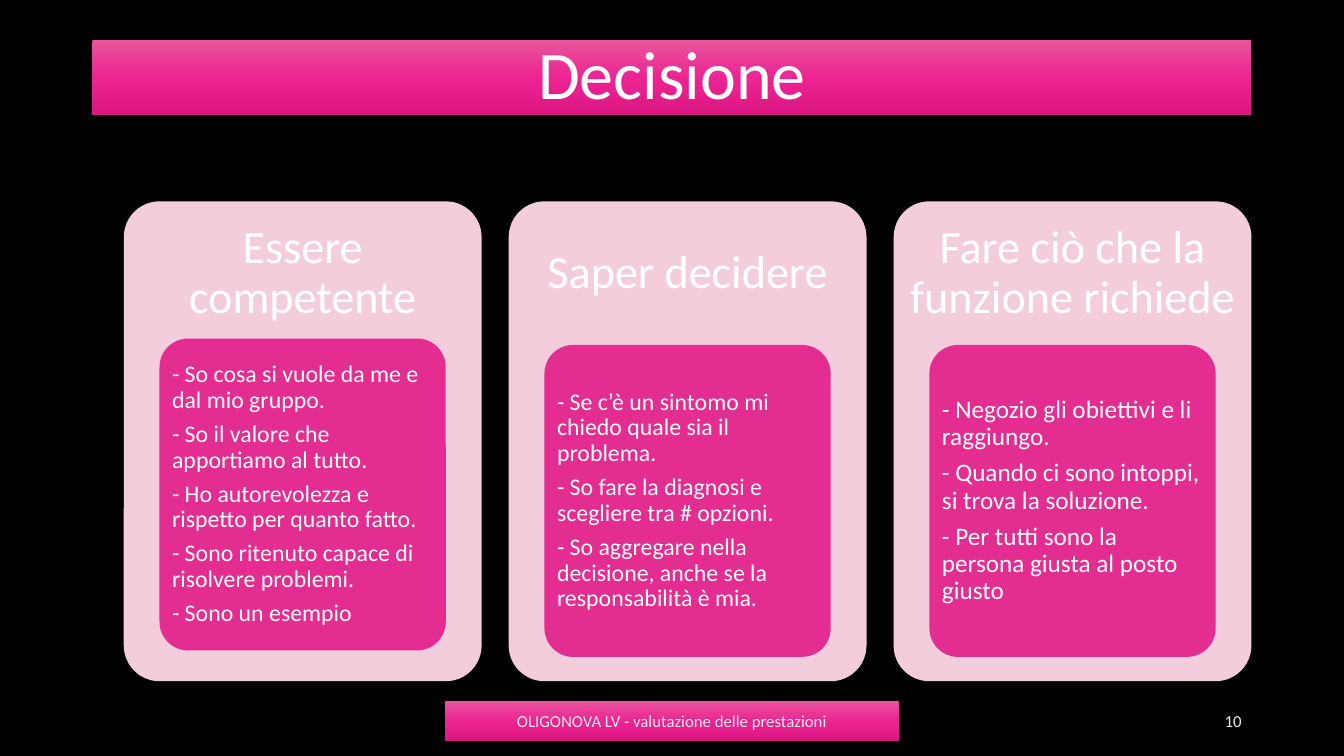
from dataclasses import dataclass

from lxml import etree
from pptx import Presentation
from pptx.dml.color import RGBColor
from pptx.enum.shapes import MSO_SHAPE
from pptx.enum.text import MSO_ANCHOR, PP_ALIGN
from pptx.oxml.ns import qn
from pptx.util import Pt

RECT, ROUND = MSO_SHAPE.RECTANGLE, MSO_SHAPE.ROUNDED_RECTANGLE
LEFT, CENTER, RIGHT = PP_ALIGN.LEFT, PP_ALIGN.CENTER, PP_ALIGN.RIGHT
MIDDLE = MSO_ANCHOR.MIDDLE


@dataclass(frozen=True)
class Theme:
    font: str = "Calibri"
    back: str = "000000"
    white: str = "FFFFFF"
    pale: str = "F4CDDC"
    pink: str = "E32D91"
    foot: str = "EDEDED"
    bar: tuple = ((0, "E8559D"), (50, "EC2492"), (100, "DC1683"))
    title: float = 48.6
    head: float = 33
    small: float = 12


THEME = Theme()
CARDS = [
    ("Essere competente", 17, 98, [
        "- So cosa si vuole da me e dal mio gruppo.",
        "- So il valore che apportiamo al tutto.",
        "- Ho autorevolezza e rispetto per quanto fatto.",
        "- Sono ritenuto capace di risolvere problemi.",
        "- Sono un esempio"]),
    ("Saper decidere", 17, 102.6, [
        "- Se c’è un sintomo mi chiedo quale sia il problema.",
        "- So fare la diagnosi e scegliere tra # opzioni.",
        "- So aggregare nella decisione, anche se la responsabilità è mia."]),
    ("Fare ciò che la funzione richiede", 18, 102.6, [
        "- Negozio gli obiettivi e li raggiungo.",
        "- Quando ci sono intoppi, si trova la soluzione.",
        "- Per tutti sono la persona giusta al posto giusto"]),
]


def apply(item, values):
    for name, value in values.items():
        setattr(item, name, value)


def write(shape, lines, size, align, color=THEME.white, pad=(7.2, 3.6), line=0.9, after=0):
    frame = shape.text_frame
    side, edge = map(Pt, pad)
    apply(frame, dict(word_wrap=True, vertical_anchor=MIDDLE, margin_left=side,
                      margin_right=side, margin_top=edge, margin_bottom=edge))
    for i, text in enumerate(lines):
        para = frame.add_paragraph() if i else frame.paragraphs[0]
        apply(para, dict(text=text, alignment=align, line_spacing=line, space_after=Pt(after)))
        apply(para.font, dict(name=THEME.font, size=Pt(size)))
        para.font.color.rgb = RGBColor.from_string(color)


def add_text(slide, box):
    return slide.shapes.add_textbox(*map(Pt, box))


def add_block(slide, kind, box, color):
    shape = slide.shapes.add_shape(kind, *map(Pt, box))
    shape.shadow.inherit = False
    shape.line.fill.background()
    shape.fill.solid()
    shape.fill.fore_color.rgb = RGBColor.from_string(color)
    if kind == ROUND:
        shape.adjustments[0] = 0.1
    return shape


def add_color(parent, color):
    return etree.SubElement(parent, qn("a:srgbClr"), val=color)


def add_bar(slide, box):
    shape = add_block(slide, RECT, box, THEME.pink)
    props = shape.element.spPr
    grad = etree.Element(qn("a:gradFill"), rotWithShape="1")
    stops = etree.SubElement(grad, qn("a:gsLst"))
    for spot, color in THEME.bar:
        add_color(etree.SubElement(stops, qn("a:gs"), pos=str(spot * 1000)), color)
    etree.SubElement(grad, qn("a:lin"), ang="5400000", scaled="0")
    props.replace(props.find(qn("a:solidFill")), grad)
    shade = etree.SubElement(props.find(qn("a:effectLst")), qn("a:outerShdw"),
                             blurRad=str(Pt(3)), dist=str(Pt(1.5)), dir="5400000",
                             algn="ctr", rotWithShape="0")
    etree.SubElement(add_color(shade, THEME.back), qn("a:alpha"), val="45000")
    return shape


def add_title(slide, box):
    write(add_bar(slide, box), ["Decisione"], THEME.title, CENTER)


def add_card(slide, box, head, size, drop, lines):
    x, y, w, h = box
    add_block(slide, ROUND, box, THEME.pale)
    write(add_text(slide, (x, y, w, h * 0.3)), [head], THEME.head, CENTER, pad=(10, 10))
    inner = (x + w * 0.1, y + drop, w * 0.8, h * 0.65)
    panel = add_block(slide, ROUND, inner, THEME.pink)
    write(panel, lines, size, LEFT, pad=(3, 2.5), after=size * 0.35)


def add_cards(slide, box):
    x, y, w, h = box
    wide = 255.6
    step = (w - wide) / (len(CARDS) - 1)
    for i, card in enumerate(CARDS):
        add_card(slide, (x + i * step, y, wide, h), *card)


def add_foot(slide, box):
    x, y, w, h = box
    bar = add_bar(slide, (x + w / 2 - 162, y, 324, h))
    write(bar, ["OLIGONOVA LV - valutazione delle prestazioni"], THEME.small, CENTER,
          THEME.foot, line=1.0)
    page = add_text(slide, (x + w - 216, y, 216, h))
    write(page, ["10"], THEME.small, RIGHT, THEME.foot, line=1.0)


def main():
    deck = Presentation()
    apply(deck, dict(slide_width=Pt(960), slide_height=Pt(540)))
    slide = deck.slides.add_slide(deck.slide_layouts[6])
    fill = slide.background.fill
    fill.solid()
    fill.fore_color.rgb = RGBColor.from_string(THEME.back)
    add_title(slide, (66, 28.75, 828, 53.5))
    add_cards(slide, (88.4, 143.8, 805.5, 342.8))
    add_foot(slide, (66, 500.5, 828, 28.75))
    deck.save("out.pptx")


if __name__ == "__main__":
    main()
